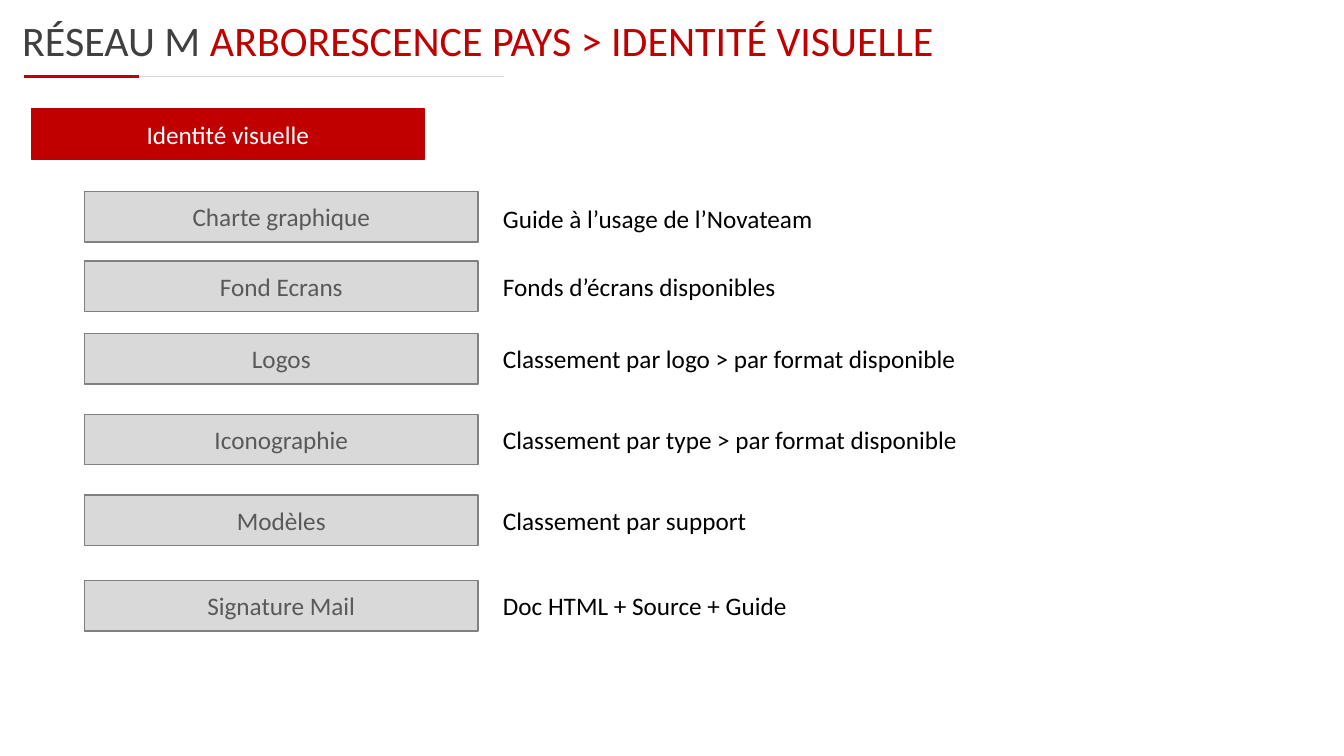
from dataclasses import dataclass

from lxml.etree import SubElement
from pptx import Presentation
from pptx.dml.color import RGBColor
from pptx.enum.shapes import MSO_CONNECTOR, MSO_SHAPE
from pptx.enum.text import MSO_ANCHOR, MSO_AUTO_SIZE, PP_ALIGN
from pptx.oxml.ns import qn
from pptx.util import Inches, Pt


@dataclass(frozen=True)
class Theme:
    font: str = "Calibri"
    title_size: int = 30
    body_size: int = 18
    red: str = "C00000"
    white: str = "FFFFFF"
    black: str = "000000"
    title_grey: str = "404040"
    label_grey: str = "595959"
    border_grey: str = "808080"
    light_grey: str = "D9D9D9"


THEME = Theme()

TITLE = [("RÉSEAU M ", THEME.title_grey),
         ("ARBORESCENCE PAYS > IDENTITÉ VISUELLE", THEME.red)]
ROOT_FOLDER = "Identité visuelle"
# folder, top of its box, description, top of the description
FOLDERS = [
    ("Charte graphique", 1.9, "Guide à l’usage de l’Novateam", 1.97),
    ("Fond Ecrans", 2.59, "Fonds d’écrans disponibles", 2.64),
    ("Logos", 3.31, "Classement par logo > par format disponible", 3.36),
    ("Iconographie", 4.11, "Classement par type > par format disponible", 4.16),
    ("Modèles", 4.91, "Classement par support", 4.96),
    ("Signature Mail", 5.76, "Doc HTML + Source + Guide", 5.81),
]
# start, end, colour, width
TITLE_RULES = [(1.38, 5, THEME.light_grey, 0.25),
               (0.24, 1.38, THEME.red, 2.5)]
RULE_TOP = 0.76
ROOT_LEFT, ROOT_TOP = 0.31, 1.08
FOLDER_LEFT, DESCRIPTION_LEFT = 0.84, 4.89
BOX_WIDTH, BOX_HEIGHT = 3.9, 0.5
DESCRIPTION_WIDTH, DESCRIPTION_HEIGHT = 6.73, 0.4


def rgb(colour):
    return RGBColor.from_string(colour)


def add_run(paragraph, text, *, color, size=THEME.body_size):
    run = paragraph.add_run()
    run.text = text
    run.font.name = THEME.font
    run.font.size = Pt(size)
    run.font.color.rgb = rgb(color)


def format_title(slide):
    title = slide.shapes.title
    title.left, title.top = Inches(0.12), Inches(0.09)
    title.width, title.height = Inches(12.72), Inches(1.49)
    frame = title.text_frame
    frame.auto_size = MSO_AUTO_SIZE.NONE
    frame.vertical_anchor = MSO_ANCHOR.TOP
    paragraph = frame.paragraphs[0]
    paragraph.alignment = PP_ALIGN.LEFT
    for text, color in TITLE:
        add_run(paragraph, text, color=color, size=THEME.title_size)


def add_rule(slide, start, end, color, width):
    rule = slide.shapes.add_connector(
        MSO_CONNECTOR.STRAIGHT, Inches(start), Inches(RULE_TOP),
        Inches(end), Inches(RULE_TOP))
    rule.line.color.rgb = rgb(color)
    rule.line.width = Pt(width)
    SubElement(rule.element.spPr, qn("a:effectLst"))


def add_box(slide, text, left, top, *, fill, border, color):
    box = slide.shapes.add_shape(
        MSO_SHAPE.RECTANGLE, Inches(left), Inches(top),
        Inches(BOX_WIDTH), Inches(BOX_HEIGHT))
    box.shadow.inherit = False
    box.fill.solid()
    box.fill.fore_color.rgb = rgb(fill)
    box.line.color.rgb = rgb(border)
    box.line.width = Pt(1)
    box.text_frame.vertical_anchor = MSO_ANCHOR.MIDDLE
    paragraph = box.text_frame.paragraphs[0]
    paragraph.alignment = PP_ALIGN.CENTER
    add_run(paragraph, text, color=color)


def add_description(slide, text, top):
    description = slide.shapes.add_textbox(
        Inches(DESCRIPTION_LEFT), Inches(top),
        Inches(DESCRIPTION_WIDTH), Inches(DESCRIPTION_HEIGHT))
    frame = description.text_frame
    frame.word_wrap = True
    frame.auto_size = MSO_AUTO_SIZE.SHAPE_TO_FIT_TEXT
    add_run(frame.paragraphs[0], text, color=THEME.black)


def main():
    presentation = Presentation()
    presentation.slide_width = Inches(13.33)
    presentation.slide_height = Inches(7.5)
    slide = presentation.slides.add_slide(presentation.slide_layouts[5])

    format_title(slide)
    for rule in TITLE_RULES:
        add_rule(slide, *rule)
    add_box(slide, ROOT_FOLDER, ROOT_LEFT, ROOT_TOP,
            fill=THEME.red, border=THEME.red, color=THEME.white)
    for folder, box_top, description, description_top in FOLDERS:
        add_box(slide, folder, FOLDER_LEFT, box_top, fill=THEME.light_grey,
                border=THEME.border_grey, color=THEME.label_grey)
        add_description(slide, description, description_top)

    presentation.save("out.pptx")


if __name__ == "__main__":
    main()
